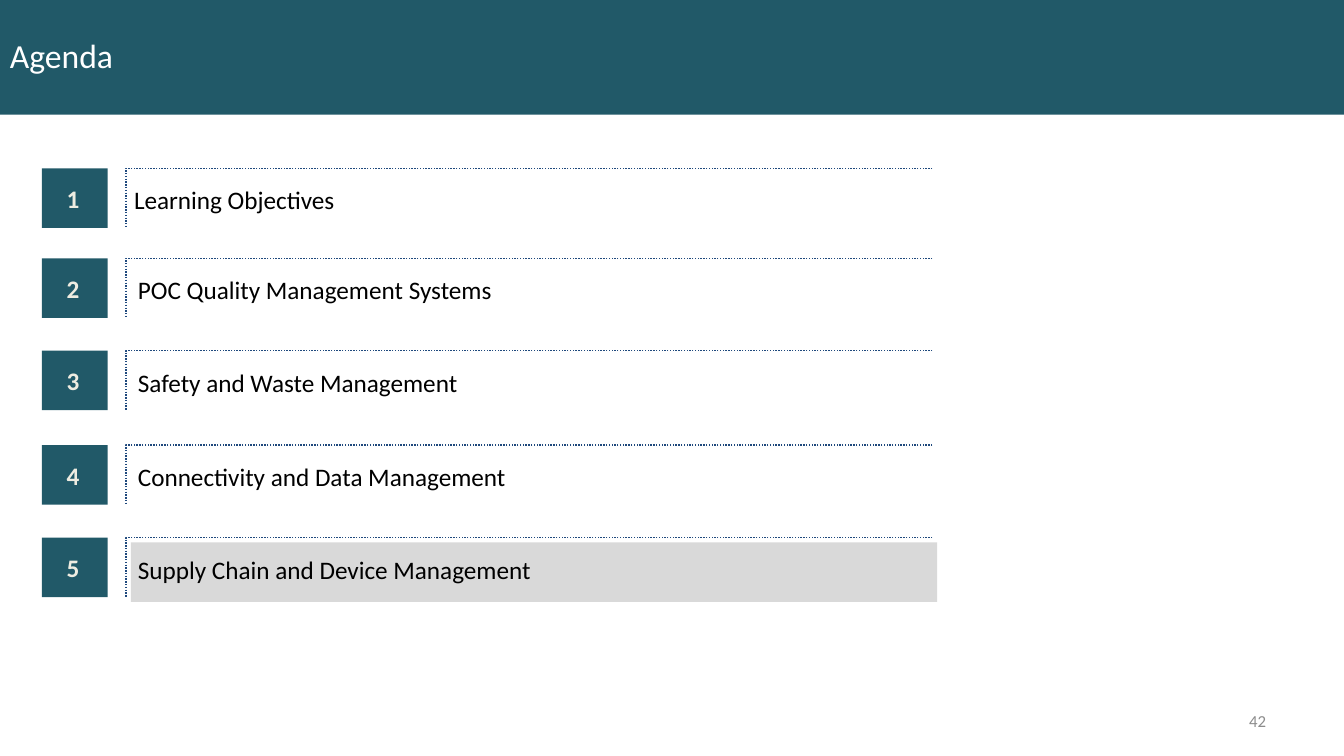
from dataclasses import dataclass

from pptx import Presentation
from pptx.dml.color import RGBColor
from pptx.enum import dml, shapes, text
from pptx.util import Pt

COLOURS = {
    "teal": "215968",
    "navy": "1F497D",
    "cream": "EEECE1",
    "highlight": "D9D9D9",
    "page_number": "8C8C8C",
    "white": "FFFFFF",
    "black": "000000",
}
FONT = "Calibri"
ROW_HEIGHT = 42.5
FRAME_LEFT, FRAME_WIDTH = 90, 576
DEFAULT_INSETS = (7.2, 3.6, 7.2, 3.6)
NO_INSETS = (0, 0, 0, 0)
MIDDLE = text.MSO_ANCHOR.MIDDLE


@dataclass
class Area:
    left: float
    top: float
    width: float
    height: float

    def lengths(self) -> tuple:
        return Pt(self.left), Pt(self.top), Pt(self.width), Pt(self.height)


@dataclass
class Style:
    size: float
    colour: str
    bold: bool = False
    align: text.PP_ALIGN = text.PP_ALIGN.LEFT
    anchor: text.MSO_ANCHOR = MIDDLE
    insets: tuple = DEFAULT_INSETS
    line_spacing: float = 1.0


@dataclass
class AgendaItem:
    title: str
    top: float
    label_left: float = 98.5
    label_drop: float = 13.25
    line_spacing: float = 0.95


ITEMS = [
    AgendaItem("Learning Objectives", 120.25, 95.75, 11.5, 1.0),
    AgendaItem("POC Quality Management Systems", 184.5),
    AgendaItem("Safety and Waste Management", 250.5),
    AgendaItem("Connectivity and Data Management", 318),
    AgendaItem("Supply Chain and Device Management", 384),
]
NUMBER_STYLE = Style(18, "cream", True, text.PP_ALIGN.CENTER,
                     insets=(4.3, 3.6, 7.2, 3.6))


def colour(name: str) -> RGBColor:
    return RGBColor.from_string(COLOURS[name])


def write(box, words: str, style: Style) -> None:
    frame = box.text_frame
    frame.word_wrap = True
    frame.vertical_anchor = style.anchor
    (frame.margin_left, frame.margin_top,
     frame.margin_right, frame.margin_bottom) = map(Pt, style.insets)
    para = frame.paragraphs[0]
    para.alignment = style.align
    para.line_spacing = style.line_spacing
    span = para.add_run()
    span.text = words
    span.font.name = FONT
    span.font.size = Pt(style.size)
    span.font.bold = style.bold
    span.font.color.rgb = colour(style.colour)


def add_block(parent, area: Area, fill: str):
    block = parent.shapes.add_shape(shapes.MSO_SHAPE.RECTANGLE, *area.lengths())
    block.shadow.inherit = False
    block.fill.solid()
    block.fill.fore_color.rgb = colour(fill)
    block.line.fill.background()
    return block


def add_words(parent, area: Area, words: str, style: Style) -> None:
    write(parent.shapes.add_textbox(*area.lengths()), words, style)


def add_frame(parent, top: float) -> None:
    """Draw the dotted corner: top edge, then left edge."""
    right, bottom = FRAME_LEFT + FRAME_WIDTH, top + ROW_HEIGHT
    builder = parent.shapes.build_freeform(Pt(right), Pt(top))
    builder.add_line_segments(
        [(Pt(FRAME_LEFT), Pt(top)), (Pt(FRAME_LEFT), Pt(bottom))], close=False)
    corner = builder.convert_to_shape()
    corner.shadow.inherit = False
    corner.fill.background()
    corner.line.color.rgb = colour("navy")
    corner.line.width = Pt(1)
    corner.line.dash_style = dml.MSO_LINE.ROUND_DOT


def add_item(page, number: int, item: AgendaItem) -> None:
    group = page.shapes.add_group_shape()
    badge = add_block(group, Area(30, item.top, 47, ROW_HEIGHT), "teal")
    write(badge, str(number), NUMBER_STYLE)
    label_style = Style(18, "black", anchor=text.MSO_ANCHOR.TOP,
                        insets=NO_INSETS, line_spacing=item.line_spacing)
    label_area = Area(item.label_left, item.top + item.label_drop, 560, 21)
    add_words(group, label_area, item.title, label_style)
    add_frame(group, item.top)


def main() -> None:
    deck = Presentation()
    deck.slide_width, deck.slide_height = Pt(960), Pt(540)
    page = deck.slides.add_slide(deck.slide_layouts[6])

    # Header band and title
    add_block(page, Area(0, -2, 960, 84), "teal")
    add_words(page, Area(0, 0, 957, 78), "Agenda", Style(24, "white"))

    # Highlight behind the current item
    add_block(page, Area(FRAME_LEFT + 3.5, ITEMS[-1].top + 3.5,
                         FRAME_WIDTH, ROW_HEIGHT), "highlight")

    # Agenda rows
    for number, item in enumerate(ITEMS, start=1):
        add_item(page, number, item)

    # Page number
    add_words(page, Area(687.5, 500.5, 224, 28.75), "42",
              Style(12, "page_number", align=text.PP_ALIGN.RIGHT))

    deck.save("out.pptx")


if __name__ == "__main__":
    main()
